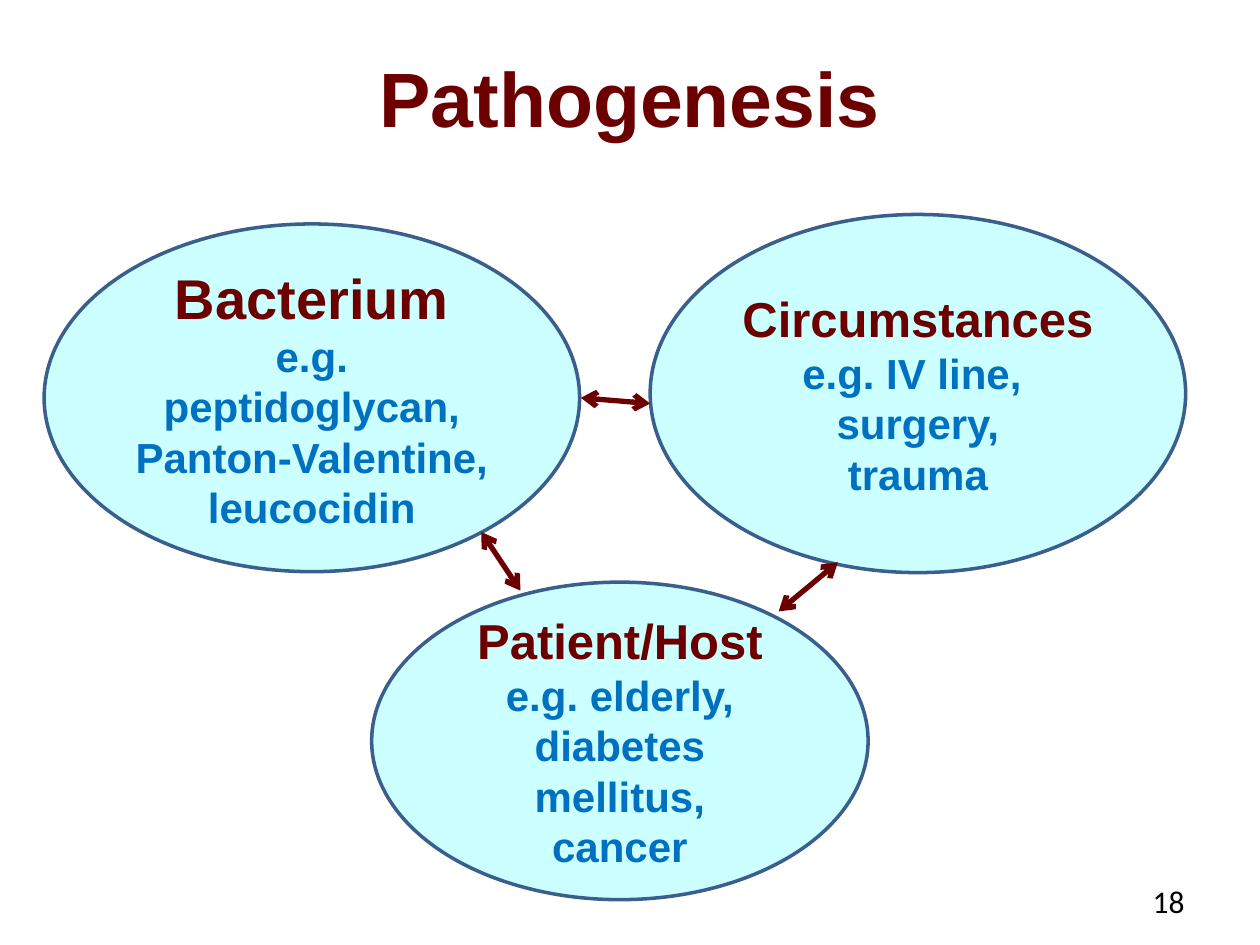
"""Build the Pathogenesis slide: three linked factors in ellipses."""
from lxml import etree
from pptx import Presentation
from pptx.dml.color import RGBColor
from pptx.enum.shapes import MSO_CONNECTOR, MSO_SHAPE
from pptx.enum.text import MSO_ANCHOR, PP_ALIGN
from pptx.oxml.ns import qn
from pptx.util import Inches, Pt

OVAL, STRAIGHT = MSO_SHAPE.OVAL, MSO_CONNECTOR.STRAIGHT
MIDDLE, CENTER, RIGHT = MSO_ANCHOR.MIDDLE, PP_ALIGN.CENTER, PP_ALIGN.RIGHT
WIDTH, HEIGHT = 10, 7.5

THEME = {
    "fill": "CCFFFF", "outline": "3A5F8C", "arrow": "6C0000",
    "title": {"size": 44, "name": "Arial", "bold": True, "color": "6C0000"},
    "large": {"size": 32, "name": "Arial", "bold": True, "color": "6C0000"},
    "head": {"size": 28, "name": "Arial", "bold": True, "color": "6C0000"},
    "body": {"size": 24, "name": "Arial", "bold": True, "color": "0070C0"},
    "number": {"size": 18, "name": "Calibri", "bold": False, "color": "000000"},
}

TITLE = ("Pathogenesis", (0.05, 0.04, 0.9, 0.124))
NUMBER = ("18", (0.717, 0.927, 0.233, 0.053))
FACTORS = [
    ((0.516, 0.227, 0.425, 0.379),
     [[("Circumstances", "head")], [("e.g. IV line, ", "body")],
      [("surgery,", "body")], [("trauma", "body")]]),
    ((0.035, 0.237, 0.425, 0.368),
     [[("Bacterium ", "large"), ("e.g. peptidoglycan,", "body")],
      [("Panton-Valentine,", "body")], [("leucocidin", "body")]]),
    ((0.295, 0.616, 0.394, 0.336),
     [[("Patient/Host", "head")], [("e.g. elderly,", "body")],
      [("diabetes mellitus,", "body")], [("cancer", "body")]]),
]
LINKS = [
    (0.618, 0.647, 0.665, 0.595),
    (0.382, 0.563, 0.413, 0.625),
    (0.461, 0.421, 0.516, 0.427),
]


def scale(shares):
    """Turn alternating width and height shares into lengths."""
    return [Inches(v * (HEIGHT if i % 2 else WIDTH)) for i, v in enumerate(shares)]


def write(shape, paragraphs, align=CENTER):
    """Fill a shape with paragraphs of (text, style) runs."""
    tf = shape.text_frame
    tf.word_wrap, tf.vertical_anchor = True, MIDDLE
    for i, runs in enumerate(paragraphs):
        p = tf.paragraphs[0] if i == 0 else tf.add_paragraph()
        p.alignment = align
        for text, style in runs:
            r = p.add_run()
            r.text = text
            for key, value in THEME[style].items():
                if key == "color":
                    r.font.color.rgb = RGBColor.from_string(value)
                else:
                    setattr(r.font, key, Pt(value) if key == "size" else value)


def stroke(line, color, width):
    """Set the colour and width of a line."""
    line.color.rgb = RGBColor.from_string(color)
    line.width = Pt(width)


def add_factor(s, box, paragraphs):
    """Add one labelled ellipse."""
    sp = s.shapes.add_shape(OVAL, *scale(box))
    sp.shadow.inherit = False
    sp.fill.solid()
    sp.fill.fore_color.rgb = RGBColor.from_string(THEME["fill"])
    stroke(sp.line, THEME["outline"], 2)
    write(sp, paragraphs)


def add_link(s, ends):
    """Add one double-headed arrow."""
    link = s.shapes.add_connector(STRAIGHT, *scale(ends))
    stroke(link.line, THEME["arrow"], 3)
    ln = link.line._get_or_add_ln()
    for end in ("a:headEnd", "a:tailEnd"):
        etree.SubElement(ln, qn(end), type="arrow")
    etree.SubElement(link._element.spPr, qn("a:effectLst"))


def main():
    """Assemble and save the slide."""
    prs = Presentation()
    prs.slide_width, prs.slide_height = Inches(WIDTH), Inches(HEIGHT)
    s = prs.slides.add_slide(prs.slide_layouts[5])
    text, box = TITLE
    title = s.shapes.title
    title.left, title.top, title.width, title.height = scale(box)
    write(title, [[(text, "title")]])
    for box, paragraphs in FACTORS:
        add_factor(s, box, paragraphs)
    for ends in LINKS:
        add_link(s, ends)
    text, box = NUMBER
    write(s.shapes.add_textbox(*scale(box)), [[(text, "number")]], RIGHT)
    prs.save("out.pptx")


if __name__ == "__main__":
    main()
